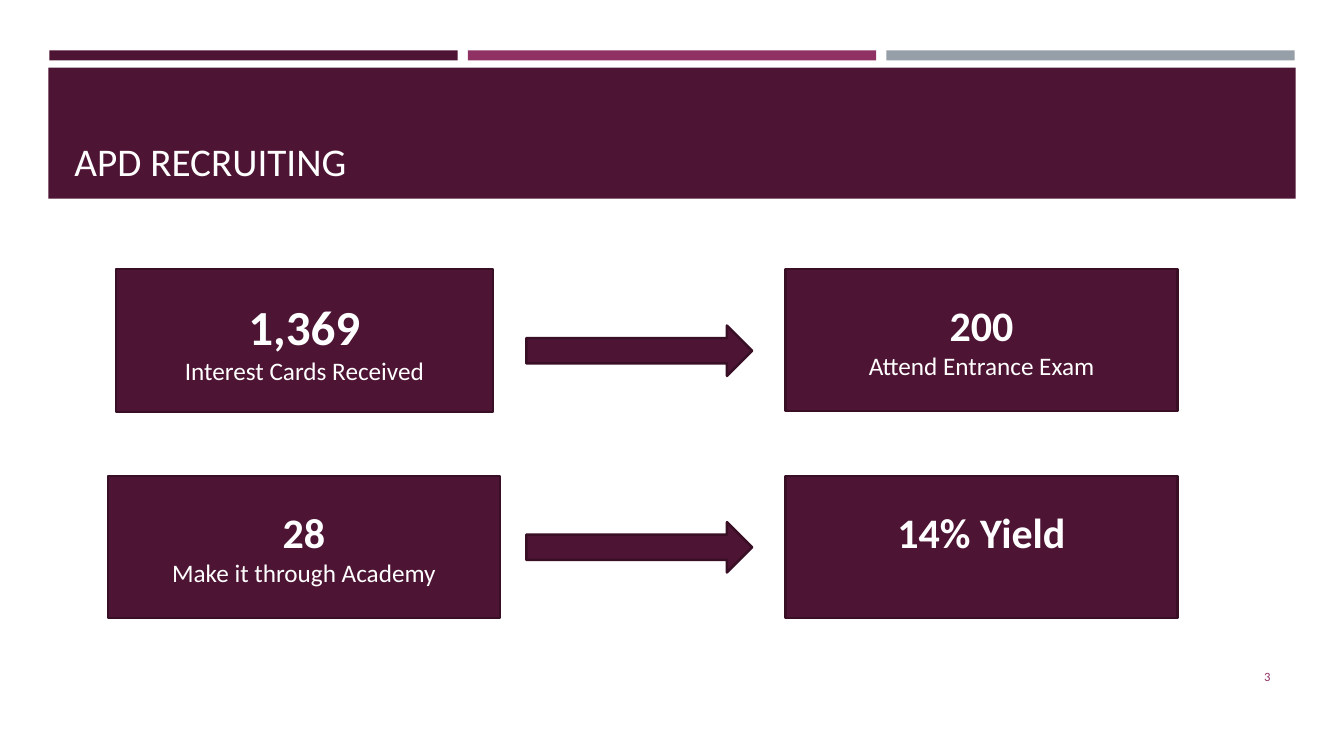
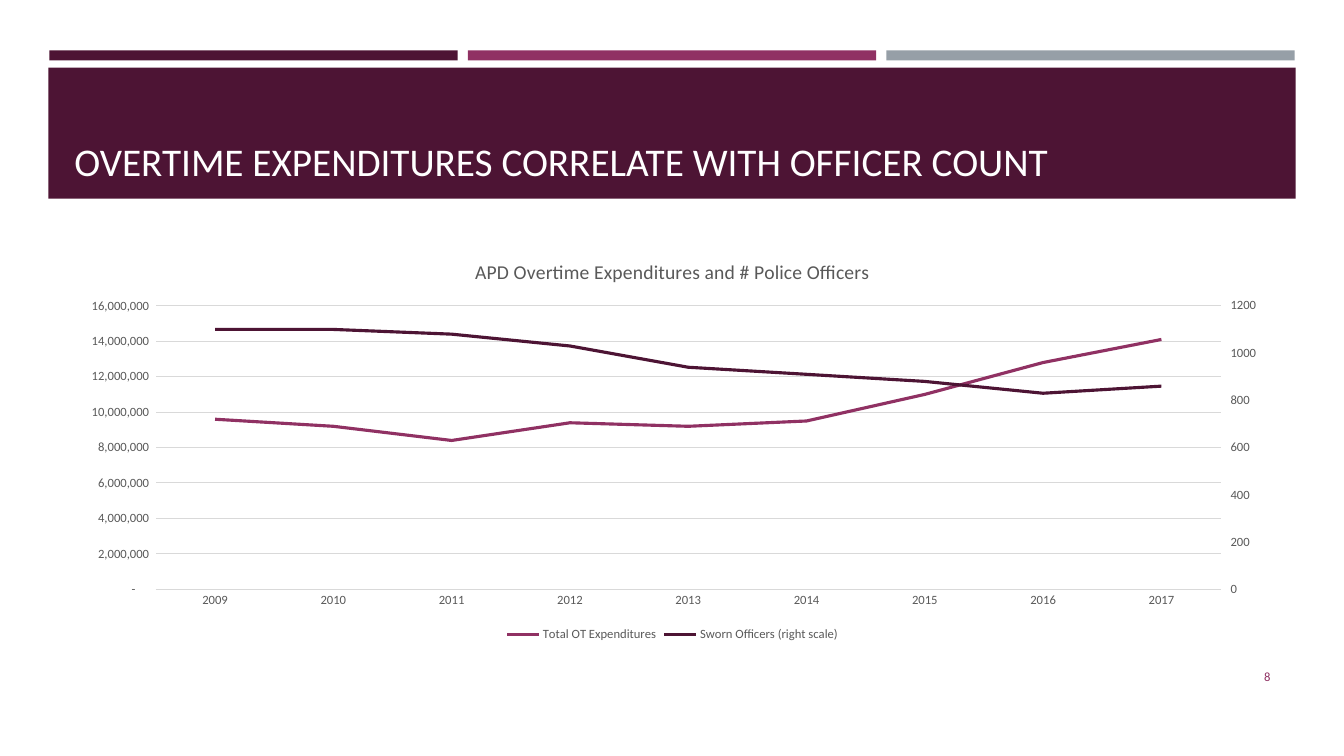
import copy

import pptx
import pptx.chart.data
import pptx.dml.color
import pptx.enum.chart
import pptx.enum.shapes
import pptx.enum.text
import pptx.oxml
import pptx.util

Inches, Pt = pptx.util.Inches, pptx.util.Pt
RGB = pptx.dml.color.RGBColor.from_string
SHAPE = pptx.enum.shapes.MSO_SHAPE
ALIGN = pptx.enum.text.PP_ALIGN
ANCHOR = pptx.enum.text.MSO_ANCHOR

FONT = "Calibri"
COLORS = {
    "plum": "4D1434",
    "edge": "390F26",
    "magenta": "903163",
    "gray": "969FA7",
    "white": "FFFFFF",
    "label": "595959",
    "grid": "D9D9D9",
}


def add_box(slide, kind, at, fill, line=None):
    sp = slide.shapes.add_shape(kind, *map(Inches, at))
    sp.shadow.inherit = False
    sp.fill.solid()
    sp.fill.fore_color.rgb = RGB(COLORS[fill])
    if line:
        sp.line.color.rgb = RGB(COLORS[line])
        sp.line.width = Pt(1.75)
    else:
        sp.line.fill.background()
    return sp


def write(sp, lines, color, align, anchor):
    """Fill a shape with one paragraph per (text, size, bold) line."""
    tf = sp.text_frame
    tf.word_wrap = True
    tf.vertical_anchor = anchor
    for i, (text, size, bold) in enumerate(lines):
        p = tf.add_paragraph() if i else tf.paragraphs[0]
        p.text = text
        p.alignment = align
        p.font.name = FONT
        p.font.size = Pt(size)
        p.font.bold = bold
        p.font.color.rgb = RGB(COLORS[color])


prs = pptx.Presentation()
prs.slide_width, prs.slide_height = Inches(13.33), Inches(7.5)

# Shared frame: three colour bars, title band, slide number
slides = []
for title, number in [
    ("APD RECRUITING", "3"),
    ("OVERTIME EXPENDITURES CORRELATE WITH OFFICER COUNT", "8"),
]:
    s = prs.slides.add_slide(prs.slide_layouts[6])
    for i, color in enumerate(["plum", "magenta", "gray"]):
        add_box(s, SHAPE.RECTANGLE, (0.49 + i * 4.15, 0.5, 4.05, 0.1), color)
    add_box(s, SHAPE.RECTANGLE, (0.48, 0.67, 12.37, 1.3), "plum")
    tb = s.shapes.add_textbox(*map(Inches, (0.64, 0.77, 12.06, 1.11)))
    write(tb, [(title, 28, False)], "white", ALIGN.LEFT, ANCHOR.BOTTOM)
    tb = s.shapes.add_textbox(*map(Inches, (11.55, 6.51, 1.15, 0.4)))
    write(tb, [(number, 9, False)], "magenta", ALIGN.RIGHT, ANCHOR.MIDDLE)
    slides.append(s)
recruiting, overtime = slides

# Recruiting funnel
cards = [
    (SHAPE.RECTANGLE, (1.15, 2.67, 3.74, 1.42), "1,369", 35, "Interest Cards Received"),
    (SHAPE.FLOWCHART_PROCESS, (7.79, 2.67, 3.89, 1.41), "200", 30, "Attend Entrance Exam"),
    (SHAPE.FLOWCHART_PROCESS, (1.07, 4.72, 3.89, 1.41), "28", 30, "Make it through Academy"),
    (SHAPE.FLOWCHART_PROCESS, (7.79, 4.72, 3.89, 1.41), "14% Yield", 30, None),
]
for kind, at, figure, size, caption in cards:
    sp = add_box(recruiting, kind, at, "plum", "edge")
    lines = [(figure, size, True)]
    if caption:
        lines.append((caption, 18, False))
    else:
        sp.text_frame.margin_bottom = Inches(0.35)  # level with the other figures
    write(sp, lines, "white", ALIGN.CENTER, ANCHOR.MIDDLE)
for top in (3.23, 5.18):
    add_box(recruiting, SHAPE.RIGHT_ARROW, (5.22, top, 2.24, 0.5), "plum", "edge")

# Overtime chart
data = pptx.chart.data.CategoryChartData()
data.categories = [str(year) for year in range(2009, 2018)]
data.add_series("Total OT Expenditures", [
    9600000, 9200000, 8400000, 9400000, 9200000, 9500000, 11000000, 12800000, 14100000])
data.add_series("Sworn Officers (right scale)", [
    1100, 1100, 1080, 1030, 940, 910, 880, 830, 860])
chart = overtime.shapes.add_chart(
    pptx.enum.chart.XL_CHART_TYPE.LINE,
    *map(Inches, (0.64, 2.39, 12.06, 4.02)), data).chart
chart.font.name = FONT
chart.font.size = Pt(9)
chart.font.color.rgb = RGB(COLORS["label"])

chart.has_title = True
p = chart.chart_title.text_frame.paragraphs[0]
p.text = "APD Overtime Expenditures and # Police Officers"
p.font.name = FONT
p.font.size = Pt(14)
p.font.bold = False
p.font.color.rgb = RGB(COLORS["label"])

chart.has_legend = True
chart.legend.position = pptx.enum.chart.XL_LEGEND_POSITION.BOTTOM
chart.legend.include_in_layout = False

plot = chart.plots[0]
plot.vary_by_categories = False
for series, color in zip(plot.series, ["magenta", "plum"]):
    series.smooth = False
    series.format.line.color.rgb = RGB(COLORS[color])
    series.format.line.width = Pt(2.25)

cat_axis, val_axis = chart.category_axis, chart.value_axis
for axis in (cat_axis, val_axis):
    axis.major_tick_mark = pptx.enum.chart.XL_TICK_MARK.NONE
    axis.minor_tick_mark = pptx.enum.chart.XL_TICK_MARK.NONE
val_axis.format.line.fill.background()
val_axis.tick_labels.number_format = r'_(* #,##0_);_(* \(#,##0\);_(* "-"??_);_(@_)'
val_axis.tick_labels.number_format_is_linked = False
val_axis.has_major_gridlines = True
for line in (cat_axis.format.line, val_axis.major_gridlines.format.line):
    line.color.rgb = RGB(COLORS["grid"])
    line.width = Pt(0.75)

# Move the officers to a second line plot with its own right-hand axis
left_plot = chart.element.xpath(".//c:lineChart")[0]
right_plot = copy.deepcopy(left_plot)
left_plot.remove(left_plot.xpath("c:ser")[1])
right_plot.remove(right_plot.xpath("c:ser")[0])
left_plot.addnext(right_plot)

cat_xml = chart.element.xpath(".//c:catAx")[0]
val_xml = chart.element.xpath(".//c:valAx")[0]
right_cat, right_val = copy.deepcopy(cat_xml), copy.deepcopy(val_xml)
val_xml.addnext(right_val)
right_val.addnext(right_cat)
right_val.remove(right_val.xpath("c:majorGridlines")[0])

CAT_ID, VAL_ID = "5001", "5002"
for parent, query, attribute, value in [
    (right_plot, "c:axId[1]", "val", CAT_ID),
    (right_plot, "c:axId[2]", "val", VAL_ID),
    (right_cat, "c:axId", "val", CAT_ID),
    (right_cat, "c:crossAx", "val", VAL_ID),
    (right_cat, "c:delete", "val", "1"),
    (right_val, "c:axId", "val", VAL_ID),
    (right_val, "c:crossAx", "val", CAT_ID),
    (right_val, "c:axPos", "val", "r"),
    (right_val, "c:crosses", "val", "max"),
    (right_val, "c:numFmt", "formatCode", "General"),
]:
    parent.xpath(query)[0].set(attribute, value)
# An absent tick mark element means outward ticks would cross the axis
for tick in right_val.xpath("c:majorTickMark"):
    tick.set("val", "out")

prs.save("out.pptx")
